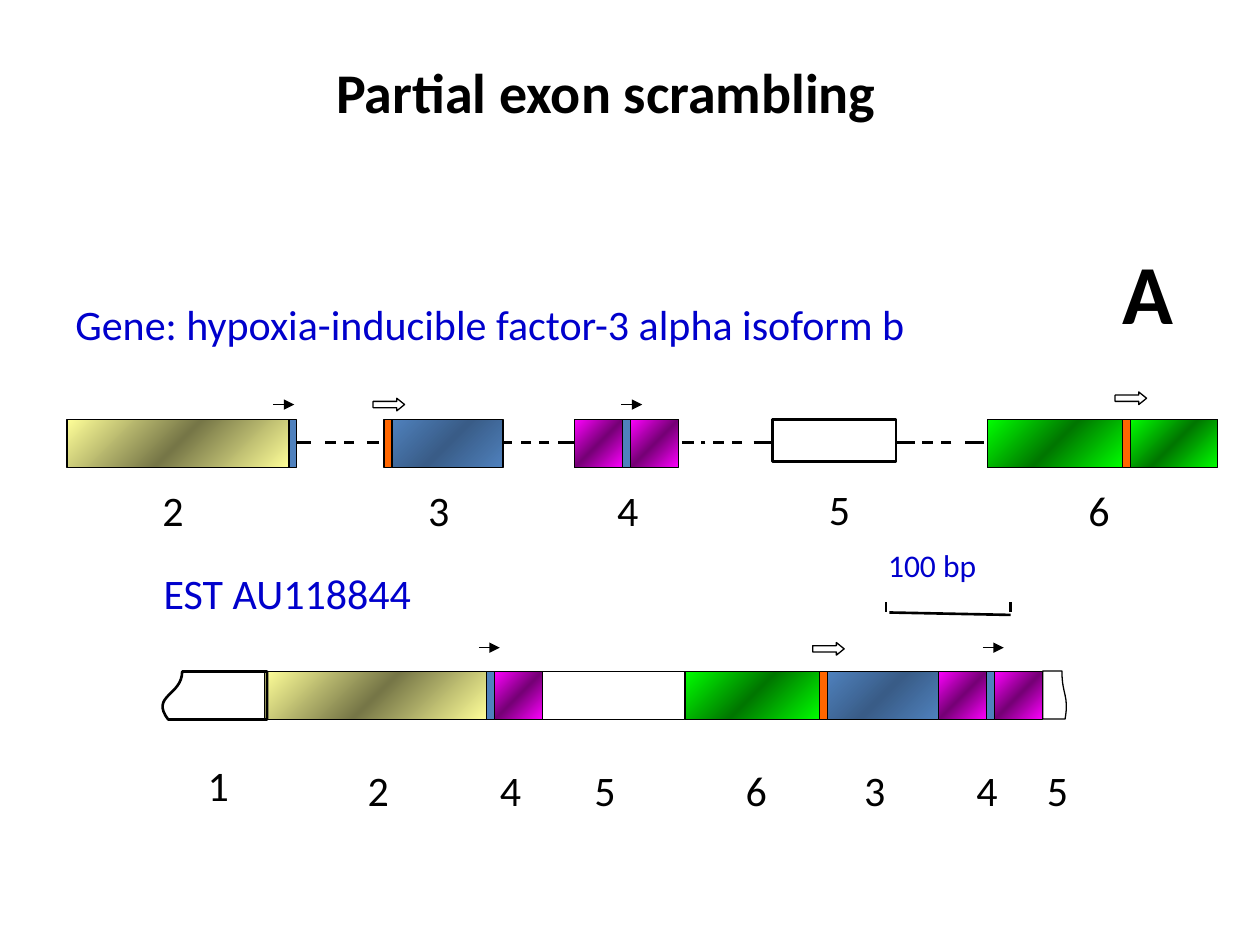
from copy import deepcopy

from lxml import etree
from pptx import Presentation
from pptx.dml.color import RGBColor
from pptx.enum.dml import MSO_LINE
from pptx.enum.shapes import MSO_CONNECTOR, MSO_SHAPE
from pptx.enum.text import MSO_AUTO_SIZE, PP_ALIGN
from pptx.oxml.ns import qn
from pptx.util import Pt

RECT, ARROW, TORN = MSO_SHAPE.RECTANGLE, MSO_SHAPE.RIGHT_ARROW, MSO_SHAPE.FLOWCHART_DOCUMENT
STRAIGHT, DASH = MSO_CONNECTOR.STRAIGHT, MSO_LINE.DASH
SHAPE_TO_FIT, CENTER = MSO_AUTO_SIZE.SHAPE_TO_FIT_TEXT, PP_ALIGN.CENTER

BLACK, BLUE, ORANGE, NAVY = "000000", "4F81BD", "FF6600", "0000CC"
YELLOW_EXON = ("FFFF99", "767647")
BLUE_EXON = (BLUE, "395C87")
PINK_EXON = ("FF00FF", "760076")
GREEN_EXON = ("00FF00", "007600")
EXON_H, STRIP_W, HALF_W = 27.4, 4.5, 27.4
UP, DOWN = 45, 315

BLUE_STRIP, ORANGE_STRIP = (STRIP_W, BLUE), (STRIP_W, ORANGE)
EXON_2 = [(126.9, YELLOW_EXON, DOWN), BLUE_STRIP]
EXON_3 = [ORANGE_STRIP, (63.4, BLUE_EXON, DOWN)]
HALF_4 = (HALF_W, PINK_EXON, DOWN)
EXON_4 = [(HALF_W, PINK_EXON, UP), BLUE_STRIP, HALF_4]
LEFT_6 = (77, GREEN_EXON, UP)
EXON_6 = [LEFT_6, ORANGE_STRIP, (49.7, GREEN_EXON, DOWN)]

INTRONS = [
    (128.9, 139.7, 146.9, 164.2, 171.4, 178.6),
    (247.7, 254.2, 257.8, 275.8, 280.8, 290.9),
    (351.4, 358.6, 362.2, 385.9, 392.4, 402.5),
    (474.5, 484.6, 488.2, 505.4, 513.4, 524.2),
]


def rgb(color):
    """Turn a hex string into a colour."""
    return RGBColor.from_string(color)


def add_text(s, x, y, w, h, text, size=24, color=BLACK, bold=False, wrap=True):
    """Add a text box that grows with its text and return it."""
    box = s.shapes.add_textbox(Pt(x), Pt(y), Pt(w), Pt(h))
    tf = box.text_frame
    tf.word_wrap = wrap
    tf.auto_size = SHAPE_TO_FIT
    tf.text = text
    font = tf.paragraphs[0].runs[0].font
    font.name, font.size, font.bold = "Calibri", Pt(size), bold
    font.color.rgb = rgb(color)
    return box


def add_line(s, x1, y1, x2, y2, width=1.5, dash=None, arrow=False):
    """Add a straight black line, dashed or with an arrowhead if asked."""
    line = s.shapes.add_connector(STRAIGHT, Pt(x1), Pt(y1), Pt(x2), Pt(y2))
    line.line.color.rgb = rgb(BLACK)
    line.line.width = Pt(width)
    if dash is not None:
        line.line.dash_style = dash
    if arrow:
        etree.SubElement(line.line._get_or_add_ln(), qn("a:tailEnd"), type="triangle")
    etree.SubElement(line._element.spPr, qn("a:effectLst"))


def add_outlined(s, kind, x, y, w, h, width=0.75, fill=None):
    """Add a black-outlined shape, empty or with a plain fill."""
    sp = s.shapes.add_shape(kind, Pt(x), Pt(y), Pt(w), Pt(h))
    sp.shadow.inherit = False
    sp.line.color.rgb = rgb(BLACK)
    sp.line.width = Pt(width)
    if fill:
        sp.fill.solid()
        sp.fill.fore_color.rgb = rgb(fill)
    else:
        sp.fill.background()
    return sp


def shade(sp, tones, angle):
    """Fill a shape with a light-dark-light gradient."""
    light, dark = tones
    sp.fill.gradient()
    sp.fill.gradient_angle = angle
    stops = sp._element.spPr.find(qn("a:gradFill")).find(qn("a:gsLst"))
    stops.append(deepcopy(stops[-1]))
    for stop, color, position in zip(sp.fill.gradient_stops, (light, dark, light), (0, 0.5, 1)):
        stop.color.rgb = rgb(color)
        stop.position = position


def add_exons(s, x, y, segments):
    """Lay segments of width, fill and angle end to end from the left."""
    for w, fill, *angle in segments:
        sp = add_outlined(s, RECT, x, y, w, EXON_H, fill=None if angle else fill)
        if angle:
            shade(sp, fill, 360 - angle[0] if angle[0] == UP else 360 - DOWN + 270)
        x += w


def add_markers(s, x, y, thin, hollow):
    """Add thin and hollow arrows at offsets from the track corner."""
    for dx, dy in thin:
        add_line(s, x + dx, y + dy, x + dx + 12, y + dy, 0.75, arrow=True)
    for dx, dy in hollow:
        sp = add_outlined(s, ARROW, x + dx, y + dy, 18, 7.2, fill="FFFFFF")
        sp.adjustments[0], sp.adjustments[1] = 0.5, 0.62


def add_labels(s, x, y, labels):
    """Number the exons at offsets from the track corner."""
    for text, dx, dy in labels:
        add_text(s, x + dx, y + dy, 36, 36, text)


def add_gene(s, x, y):
    """Draw the gene track with its introns, exons, arrows and numbers."""
    for a, b, c, d, e, f in INTRONS:
        for start, end, dash in ((a, b, None), (d, c, DASH), (e, f, None)):
            add_line(s, x + start, y + 13, x + end, y + 13, dash=dash)
    for dx, exon in ((0, EXON_2), (181.3, EXON_3), (290.2, EXON_4), (526.3, EXON_6)):
        add_exons(s, x + dx, y, exon)
    add_outlined(s, RECT, x + 403.2, y, 70.6, 23.8, 1.5)
    add_markers(s, x, y, [(118, -8.6), (316.8, -8.6)], [(175, -12.2), (599, -15.8)])
    add_labels(s, x, y, [("2", 47.5, 33.8), ("3", 199.4, 33.8), ("4", 307.4, 33.8),
                         ("5", 428.4, 33.1), ("6", 576.7, 33.8)])


def add_est(s, x, y):
    """Draw the EST track with its torn ends, exons, arrows and numbers."""
    add_exons(s, x, y, [*EXON_2, HALF_4, (81.4, None), LEFT_6, *EXON_3, *EXON_4])
    start = add_outlined(s, TORN, x - 42.5, y - 16.6, EXON_H, 60.5, 1.5)
    start.rotation = 90
    start._element.spPr.find(qn("a:xfrm")).set("flipH", "1")
    end = add_outlined(s, TORN, x + 437.8, y + 6.5, EXON_H, 13.7)
    end.rotation = 270
    add_markers(s, x, y, [(122.4, -13.7), (410.4, -13.7)], [(313.2, -16.6)])
    add_labels(s, x, y, [("1", -39.6, 46.8)] + [
        (text, dx, 49.7) for text, dx in (("2", 51.8), ("4", 127.4), ("5", 181.4), ("6", 267.8),
                                          ("3", 335.5), ("4", 399.6), ("5", 439.9))])


def add_scale(s, x, y):
    """Draw the scale bar with its caption."""
    add_text(s, x - 5.8, y - 36, 90, 28.8, "100 bp", 18, NAVY)
    add_line(s, x + 2, y + 5.8, x + 71.3, y + 7.2)
    for dx in (0, 71.3):
        add_line(s, x + dx, y, x + dx, y + 5.8)


def add_headings(s):
    """Write the title, the panel letter and the two track names."""
    add_text(s, 185, 29.5, 375, 45.4, "Partial exon scrambling", 32, bold=True, wrap=False)
    add_text(s, 634.3, 133.9, 49, 64.8, "A", 48, bold=True, wrap=False)
    gene = add_text(s, 36, 166.3, 532.8, 30.2,
                    "Gene: hypoxia-inducible factor-3 alpha isoform b", color=NAVY)
    est = add_text(s, 38.2, 326.2, 252, 31.7, "EST AU118844", color=NAVY)
    for box in (gene, est):
        box.text_frame.auto_size = MSO_AUTO_SIZE.NONE
        box.text_frame.paragraphs[0].line_spacing = 0.8
    est.text_frame.paragraphs[0].alignment = CENTER
    r = gene.text_frame.paragraphs[0].add_run()
    r.text = " "
    r.font.name, r.font.size = "Calibri", Pt(32)


def main():
    """Build the slide and save it."""
    prs = Presentation()
    prs.slide_width, prs.slide_height = Pt(720), Pt(540)
    s = prs.slides.add_slide(prs.slide_layouts[6])
    add_gene(s, 38.2, 239.8)
    add_est(s, 151.2, 383.8)
    add_scale(s, 506.2, 344.2)
    add_headings(s)
    prs.save("out.pptx")


if __name__ == "__main__":
    main()
